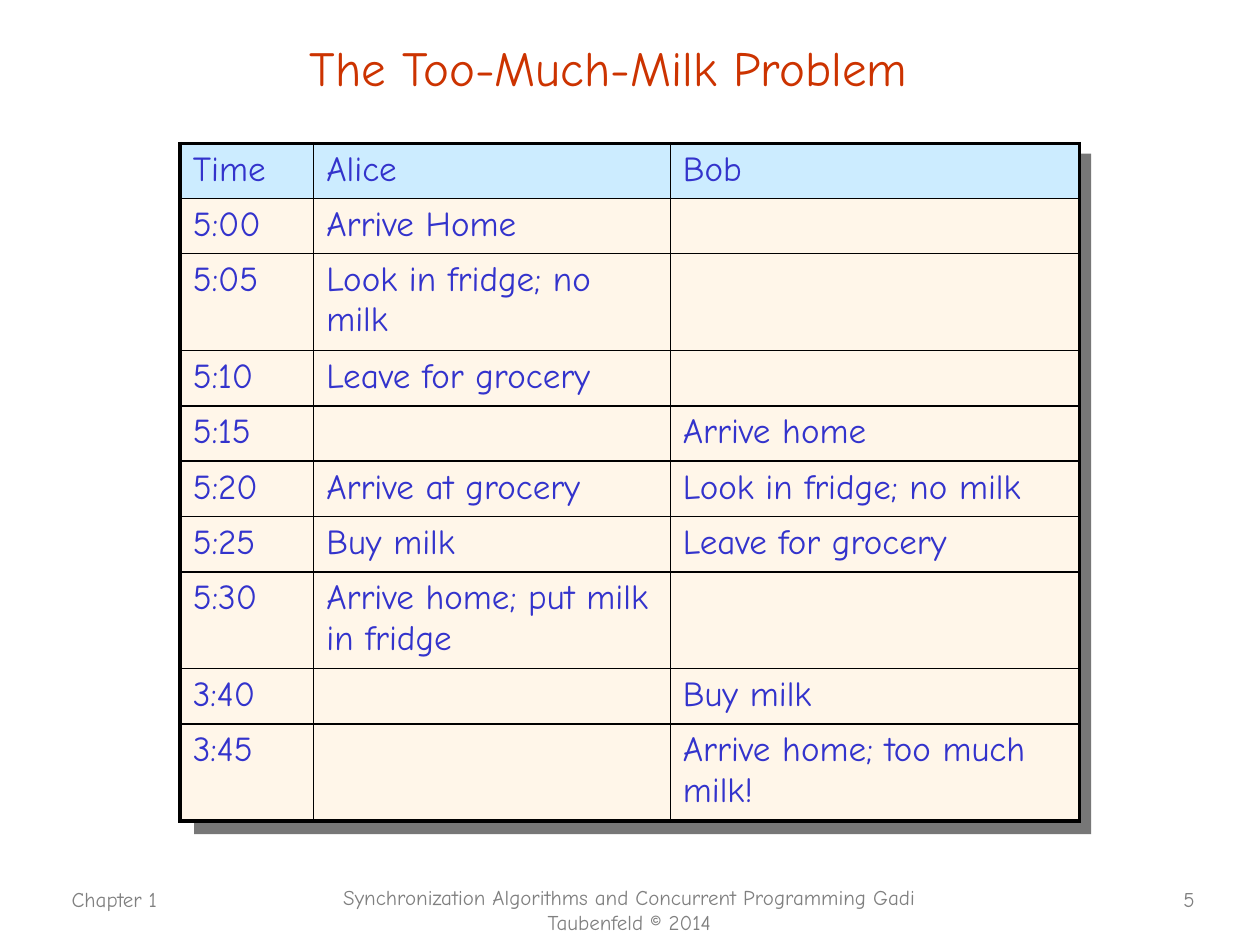
from lxml.etree import SubElement
from pptx import Presentation
from pptx.dml.color import RGBColor
from pptx.enum.shapes import MSO_SHAPE
from pptx.enum.text import MSO_ANCHOR, PP_ALIGN
from pptx.oxml import parse_xml
from pptx.oxml.ns import nsdecls, qn
from pptx.util import Inches, Pt

FONT = "Comic Neue"
RED = RGBColor(0xCC, 0x33, 0x00)
BLUE = RGBColor(0x33, 0x33, 0xCC)
GRAY = RGBColor(0x80, 0x80, 0x80)
SHADE = RGBColor(0x77, 0x77, 0x77)
SKY = RGBColor(0xCC, 0xEC, 0xFF)
CREAM = RGBColor(0xFF, 0xF6, 0xE9)
BLACK = RGBColor(0, 0, 0)

COLS = [1.06, 2.83, 3.25]
ROWS = [
    ("Time", "Alice", "Bob"),
    ("5:00", "Arrive Home", ""),
    ("5:05", "Look in fridge; no milk", ""),
    ("5:10", "Leave for grocery", ""),
    ("5:15", "", "Arrive home"),
    ("5:20", "Arrive at grocery", "Look in fridge; no milk"),
    ("5:25", "Buy milk", "Leave for grocery"),
    ("5:30", "Arrive home; put milk in fridge", ""),
    ("3:40", "", "Buy milk"),
    ("3:45", "", "Arrive home; too much milk!"),
]


def style(para, size, color):
    for font in [para.font] + [run.font for run in para.runs]:
        font.name = FONT
        font.size = Pt(size)
        font.color.rgb = color


def add_text(slide, box, text, size, color, align):
    frame = slide.shapes.add_textbox(*map(Inches, box)).text_frame
    frame.word_wrap = True
    frame.text = text
    para = frame.paragraphs[0]
    para.alignment = align
    style(para, size, color)
    return frame


def add_title(slide, box):
    frame = add_text(slide, box, "The Too-Much-Milk Problem", 28, RED,
                     PP_ALIGN.CENTER)
    frame.vertical_anchor = MSO_ANCHOR.MIDDLE
    glow = parse_xml(
        f'<a:effectLst {nsdecls("a")}>'
        '<a:outerShdw blurRad="38100" dist="38100" dir="2700000">'
        '<a:srgbClr val="C0C0C0"/></a:outerShdw></a:effectLst>')
    font = frame.paragraphs[0].runs[0].font
    font.fill.solid()
    font.color.rgb = RED
    props = frame.paragraphs[0].runs[0]._r.get_or_add_rPr()
    props.find(qn("a:solidFill")).addnext(glow)


def set_edges(cell, widths):
    props = cell._tc.get_or_add_tcPr()
    for side, width in zip("LRTB", widths):
        line = SubElement(props, qn(f"a:ln{side}"), w=str(Pt(width)))
        fill = SubElement(line, qn("a:solidFill"))
        SubElement(fill, qn("a:srgbClr"), val=str(BLACK))


def add_grid(slide, box):
    left, top, width, height = box
    shade = slide.shapes.add_shape(
        MSO_SHAPE.RECTANGLE, Inches(left + 0.11), Inches(top + 0.08),
        Inches(width - 0.02), Inches(height))
    shade.shadow.inherit = False
    shade.fill.solid()
    shade.fill.fore_color.rgb = SHADE
    shade.line.fill.background()

    frame = slide.shapes.add_table(len(ROWS), len(COLS), *map(Inches, box))
    table = frame.table
    for col, size in zip(table.columns, COLS):
        col.width = Inches(size)
    for r, row in enumerate(ROWS):
        table.rows[r].height = Inches(0.44 if r else 0.31)
        for c, text in enumerate(row):
            cell = table.cell(r, c)
            cell.text = text
            para = cell.text_frame.paragraphs[0]
            para.space_before = Pt(4)
            style(para, 20, BLUE)
            outer = (c == 0, c == len(COLS) - 1, r == 0, r == len(ROWS) - 1)
            set_edges(cell, [2.25 if edge else 1 for edge in outer])
            cell.fill.solid()
            cell.fill.fore_color.rgb = CREAM if r else SKY
    frame.height = Inches(height)


def add_foot(slide, box):
    left, top, width, height = box
    parts = [
        (0, 0.02, 2.08, "Chapter 1", PP_ALIGN.LEFT),
        (2.11, 0, 4.83, "Synchronization Algorithms and Concurrent "
         "Programming Gadi Taubenfeld © 2014", PP_ALIGN.CENTER),
        (width - 0.47, 0.02, 0.47, "5", PP_ALIGN.RIGHT),
    ]
    for x, y, wide, text, align in parts:
        add_text(slide, (left + x, top + y, wide, height), text, 12, GRAY,
                 align)


def main():
    deck = Presentation()
    deck.slide_width = Inches(10)
    deck.slide_height = Inches(7.5)
    slide = deck.slides.add_slide(deck.slide_layouts[6])
    add_foot(slide, (0.47, 6.97, 9.11, 0.5))
    add_title(slide, (0.58, 0.07, 8.5, 0.93))
    add_grid(slide, (1.43, 1.14, 7.14, 5.4))
    deck.save("out.pptx")


if __name__ == "__main__":
    main()
